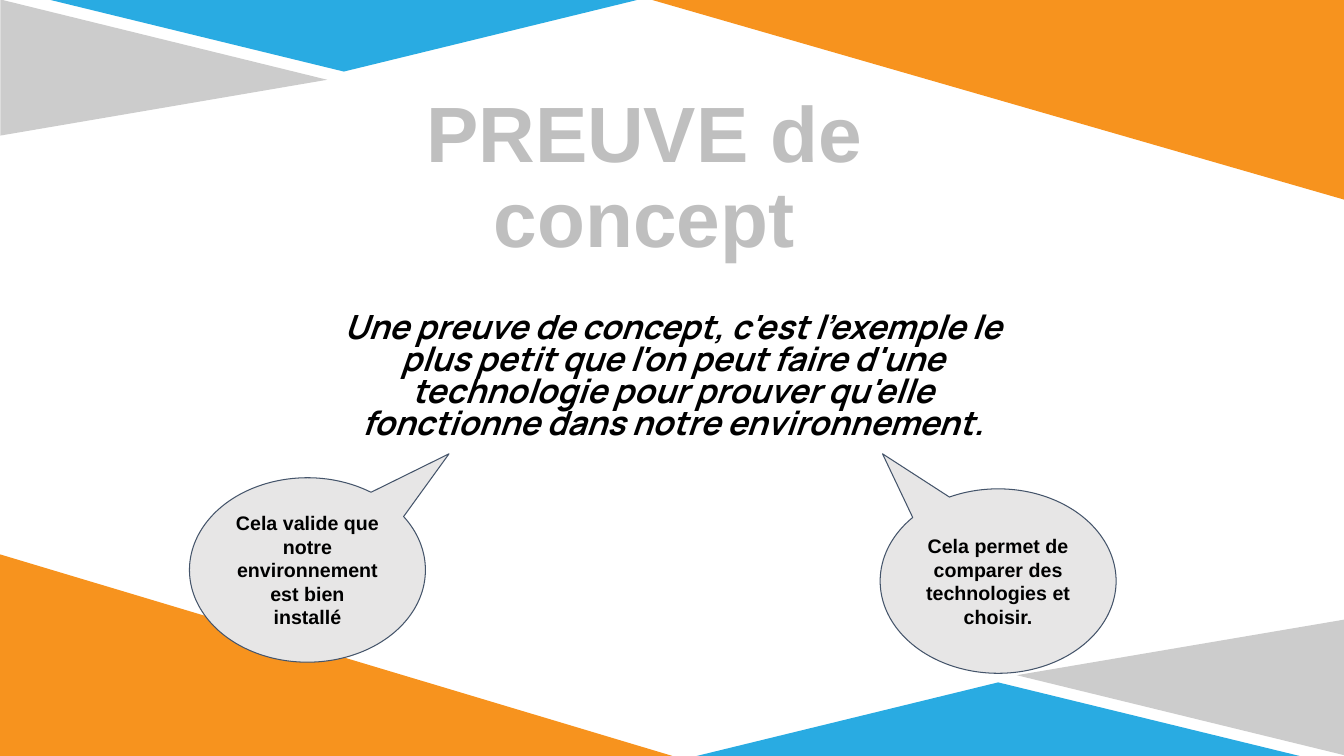
"""Build the proof-of-concept slide with its geometric border and two callouts."""
from pptx import Presentation
from pptx.dml.color import RGBColor
from pptx.enum.shapes import MSO_SHAPE as Shape
from pptx.enum.text import MSO_ANCHOR as Anchor, MSO_AUTO_SIZE as AutoSize, PP_ALIGN as Align
from pptx.util import Inches, Pt

ORANGE = RGBColor(0xF7, 0x93, 0x1E)
BLUE = RGBColor(0x29, 0xAB, 0xE2)
GREY = RGBColor(0xCC, 0xCC, 0xCC)
TITLE_GREY = RGBColor(0xBF, 0xBF, 0xBF)
BUBBLE = RGBColor(0xE7, 0xE6, 0xE6)
OUTLINE = RGBColor(0x44, 0x54, 0x6A)
BLACK = RGBColor(0, 0, 0)


class SlideBuilder:
    """Holds the text style and the current slide."""

    font = "Arial"
    inset = Inches(0.1)

    def __init__(self, prs):
        self.slide = prs.slides.add_slide(prs.slide_layouts[5])

    def set_text(self, sp, text, size, color=BLACK, font=None, italic=None, spacing=None, anchor=Anchor.MIDDLE):
        tf = sp.text_frame
        tf.text = text
        tf.word_wrap = True
        tf.auto_size = AutoSize.NONE
        tf.vertical_anchor = anchor
        tf.margin_left = tf.margin_right = tf.margin_top = tf.margin_bottom = self.inset
        p = tf.paragraphs[0]
        p.alignment = Align.CENTER
        p.space_before = Pt(0)
        p.line_spacing = spacing
        r = p.runs[0]
        r.font.name = font or self.font
        r.font.size = Pt(size)
        r.font.bold = True
        r.font.italic = italic
        r.font.color.rgb = color

    def shape(self, kind, box, fill, adjustments=(), rotation=0):
        sp = self.slide.shapes.add_shape(kind, *map(Inches, box))
        sp.shadow.inherit = False
        sp.fill.solid()
        sp.fill.fore_color.rgb = fill
        sp.line.fill.background()
        sp.rotation = rotation
        for i, value in enumerate(adjustments):
            sp.adjustments[i] = value
        return sp

    def title(self, box, text):
        sp = self.slide.shapes.title
        sp.left, sp.top, sp.width, sp.height = map(Inches, box)
        self.set_text(sp, text, 56, TITLE_GREY, spacing=0.9, anchor=Anchor.TOP)

    def definition(self, box, text):
        sp = self.slide.shapes.add_textbox(*map(Inches, box))
        self.set_text(sp, text, 23.8, font="Manrope", italic=True, spacing=0.8)

    def callout(self, left, top, tail, text):
        sp = self.shape(Shape.OVAL_CALLOUT, (left, top, 2.34, 1.83), BUBBLE, tail)
        sp.line.color.rgb = OUTLINE
        sp.line.width = Pt(0.75)
        self.set_text(sp, text, 14)


def main():
    prs = Presentation()
    prs.slide_width, prs.slide_height = Inches(13.33), Inches(7.5)
    s = SlideBuilder(prs)

    s.shape(Shape.ISOSCELES_TRIANGLE, (0.95, -0.95, 1.35, 3.24), GREY, [0.59], 90)
    s.shape(Shape.ISOSCELES_TRIANGLE, (0.42, -0.02, 5.98, 0.73), BLUE, rotation=180)
    s.shape(Shape.ISOSCELES_TRIANGLE, (11.04, 5.19, 1.35, 3.26), GREY, [0.59], 270)
    s.shape(Shape.ISOSCELES_TRIANGLE, (6.91, 6.77, 5.98, 0.73), BLUE)
    s.shape(Shape.RIGHT_TRIANGLE, (0, 5.5, 6.67, 2), ORANGE)
    s.shape(Shape.RIGHT_TRIANGLE, (6.4, -0.02, 6.93, 2), ORANGE, rotation=180)

    s.definition((3.25, 3.15, 6.84, 1.19),
                 "Une preuve de concept, c'est l’exemple le plus petit que l'on peut faire "
                 "d'une technologie pour prouver qu'elle fonctionne dans notre environnement.")
    s.title((2.98, 0.84, 6.82, 1.76), "PREUVE de concept")
    s.callout(1.88, 4.74, (0.6, -0.63), "Cela valide que notre environnement est bien installé")
    s.callout(8.73, 4.85, (-0.49, -0.69), "Cela permet de comparer des technologies et choisir.")

    prs.save("out.pptx")


if __name__ == "__main__":
    main()
